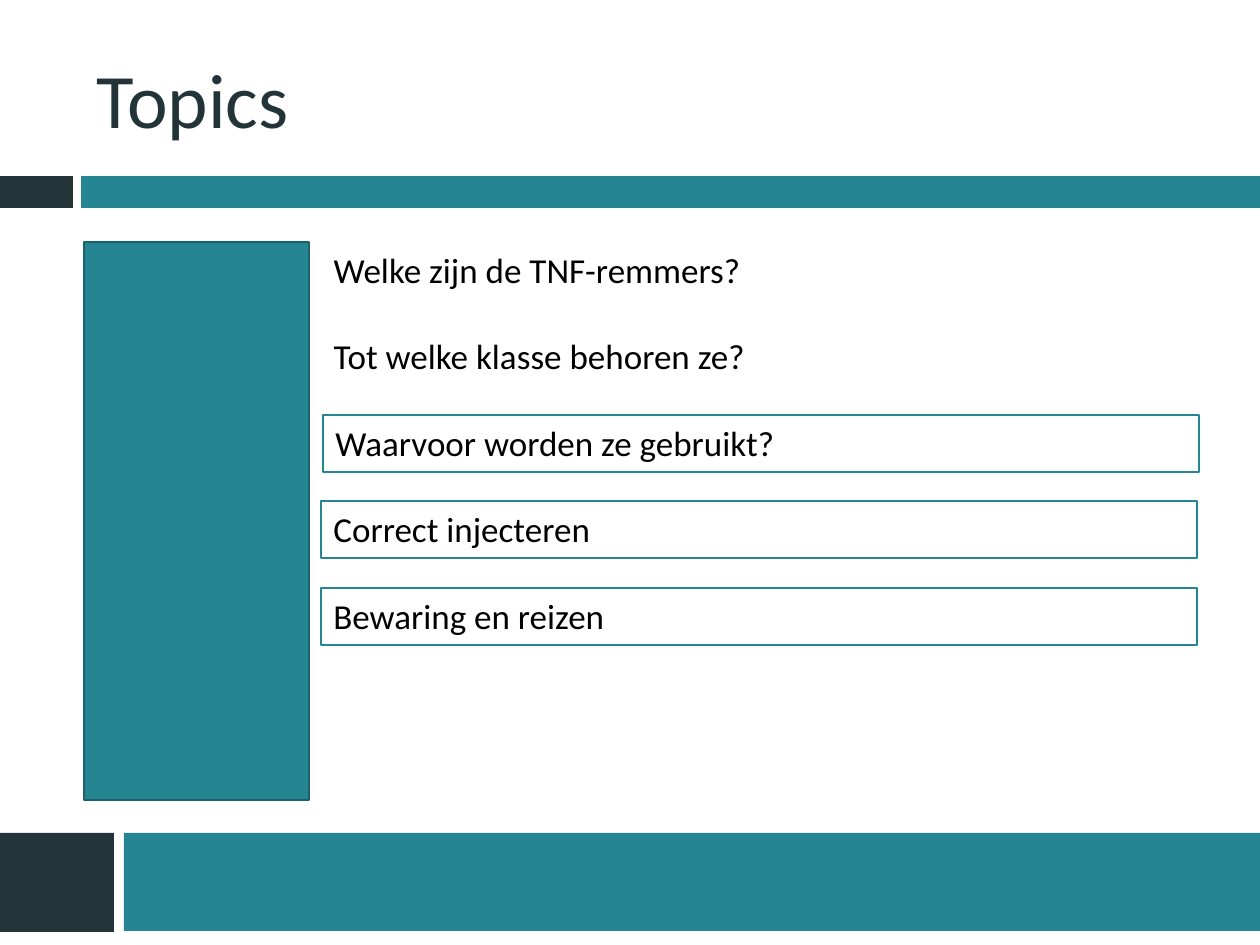
from pptx import Presentation
from pptx.dml.color import RGBColor
from pptx.enum.shapes import MSO_SHAPE
from pptx.enum.text import MSO_ANCHOR, MSO_AUTO_SIZE, PP_ALIGN
from pptx.oxml.ns import qn
from pptx.util import Pt
from lxml import etree

EMU_PER_PX = 914400 / 126
DARK, TEAL, EDGE, WHITE, BLACK = "233438", "268593", "1C626D", "FFFFFF", "000000"


def color(value):
    return RGBColor.from_string(value)


def place(part, *box):
    for side, px in zip(("left", "top", "width", "height"), box):
        setattr(part, side, round(px * EMU_PER_PX))


prs = Presentation()
prs.slide_width = round(1260 * EMU_PER_PX)
prs.slide_height = round(945 * EMU_PER_PX)
slide = prs.slides.add_slide(prs.slide_layouts[3])
title, *open_topics = slide.placeholders

# Header and footer bands, side panel
bands = [
    ((0, 176, 73, 32), DARK, None),
    ((81, 176, 1179, 32), TEAL, None),
    ((-1, 833, 115, 99), DARK, None),
    ((124, 833, 1136, 98), TEAL, None),
    ((84, 242, 225, 558), TEAL, EDGE),
]
for box, fill, edge in bands:
    band = slide.shapes.add_shape(MSO_SHAPE.RECTANGLE, 0, 0, 0, 0)
    place(band, *box)
    band.shadow.inherit = False
    band.fill.solid()
    band.fill.fore_color.rgb = color(fill)
    if edge:
        band.line.color.rgb = color(edge)
        band.line.width = Pt(1.5)
    else:
        band.line.fill.background()

# Title
place(title, 84, 38, 1113, 120)
title.text_frame.text = "Topics"
title.text_frame.vertical_anchor = MSO_ANCHOR.MIDDLE
heading = title.text_frame.paragraphs[0]
heading.alignment = PP_ALIGN.LEFT
for key, value in {"size": Pt(44), "name": "Calibri"}.items():
    setattr(heading.font, key, value)
heading.font.color.rgb = color(DARK)

# Topics: the first two are plain, the others are framed
topics = [
    ("Welke zijn de TNF-remmers?", 321),
    ("Tot welke klasse behoren ze?", 321),
    ("Waarvoor worden ze gebruikt?", 323),
    ("Correct injecteren", 321),
    ("Bewaring en reizen", 321),
]
for row, (wording, left) in enumerate(topics):
    framed = row >= len(open_topics)
    if framed:
        topic = slide.shapes.add_shape(MSO_SHAPE.RECTANGLE, 0, 0, 0, 0)
        topic.shadow.inherit = False
        topic.line.color.rgb = color(TEAL)
        topic.line.width = Pt(1.5)
    else:
        topic = open_topics[row]
    place(topic, left, 242 + 433 * row // 5, 876, 57)
    topic.fill.solid()
    topic.fill.fore_color.rgb = color(WHITE)

    frame = topic.text_frame
    frame_format = {"word_wrap": True, "auto_size": MSO_AUTO_SIZE.NONE,
                    "vertical_anchor": MSO_ANCHOR.TOP}
    for key, value in frame_format.items():
        setattr(frame, key, value)
    frame.text = wording
    line = frame.paragraphs[0]
    props = line._p.get_or_add_pPr()
    props.set("marL", "0")
    props.set("indent", "0")
    etree.SubElement(props, qn("a:buNone"))
    line.alignment = PP_ALIGN.LEFT
    line.space_before = Pt(0)
    for key, value in {"size": Pt(20), "name": "Calibri"}.items():
        setattr(line.font, key, value)
    line.font.color.rgb = color(BLACK)

prs.save("out.pptx")
